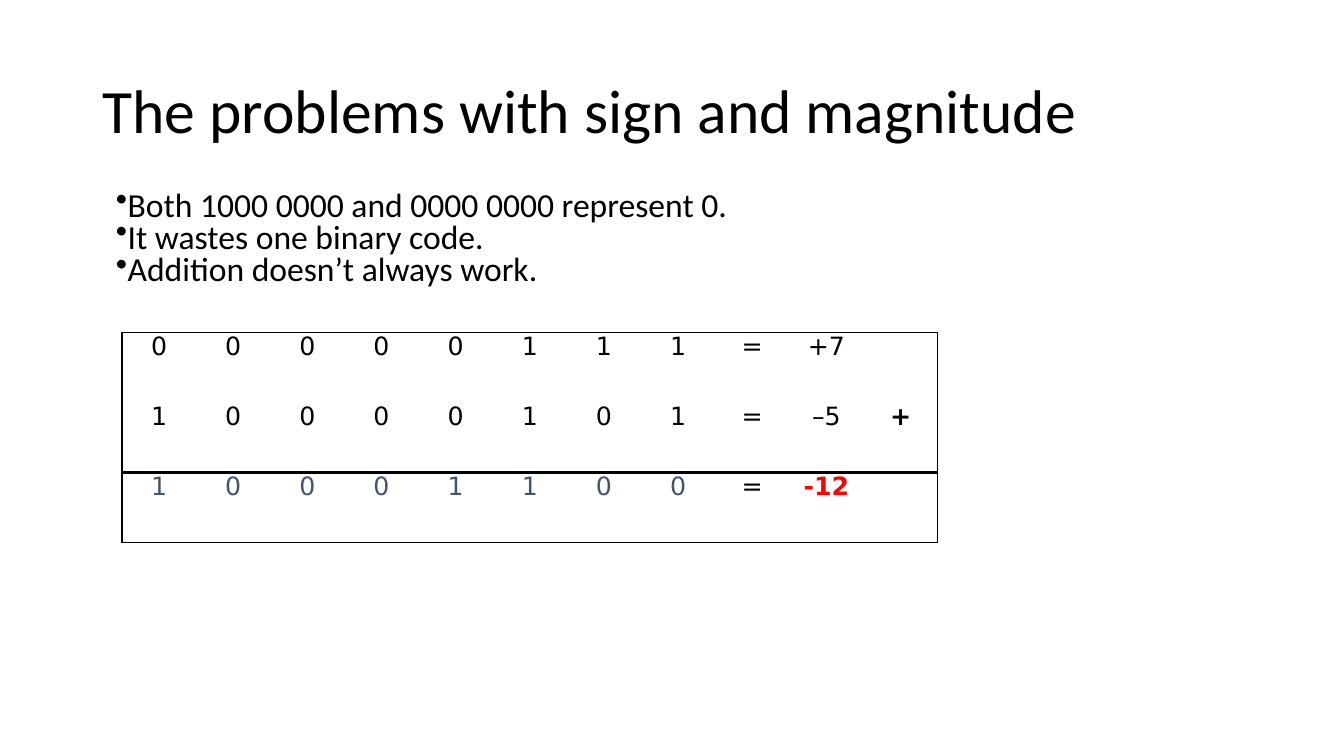
import lxml.etree
import pptx
import pptx.dml.color
import pptx.enum.text
import pptx.oxml.ns
import pptx.util

Inches = pptx.util.Inches
qn = pptx.oxml.ns.qn

COLORS = {"text": "000000", "sum": "44546A", "wrong": "FF0000"}
NO_STYLE_NO_GRID = "{2D5ABB26-0587-4C30-8999-92F81FD0307C}"
THIN, THICK = 1, 2.25

BULLETS = [
    "Both 1000 0000 and 0000 0000 represent 0.",
    "It wastes one binary code.",
    "Addition doesn’t always work.",
]
# bits, value, operator
ADDITION = [
    ("00000111", "+7", ""),
    ("10000101", "–5", "+"),
    ("10001100", "-12", ""),
]


class SlideBuilder:
    def __init__(self, prs):
        self.s = prs.slides.add_slide(prs.slide_layouts[6])
        self.font = "Calibri"
        self.table_font = "DejaVu Sans"

    def run(self, p, text, size, font, color="text", bold=False):
        r = p.add_run()
        r.text = text
        r.font.size = pptx.util.Pt(size)
        r.font.name = font
        r.font.bold = bold
        r.font.color.rgb = pptx.dml.color.RGBColor.from_string(COLORS[color])

    def text(self, box, lines, size, spacing, anchor, bullet=None):
        tf = self.s.shapes.add_textbox(*map(Inches, box)).text_frame
        tf.word_wrap = True
        tf.vertical_anchor = anchor
        for i, line in enumerate(lines):
            p = tf.add_paragraph() if i else tf.paragraphs[0]
            p.line_spacing = spacing
            if bullet:
                pPr = p._p.get_or_add_pPr()
                lxml.etree.SubElement(pPr, qn("a:buChar"), char=bullet)
            self.run(p, line, size, self.font)

    def borders(self, cell, widths):
        """Draw the sides named in widths (L, R, T, B), in points."""
        tcPr = cell._tc.get_or_add_tcPr()
        for side in "LRTB":
            if side in widths:
                width = str(pptx.util.Pt(widths[side]))
                ln = lxml.etree.SubElement(tcPr, qn("a:ln" + side), w=width)
                fill = lxml.etree.SubElement(ln, qn("a:solidFill"))
                lxml.etree.SubElement(fill, qn("a:srgbClr"), val=COLORS["text"])

    def addition_table(self, box, rows):
        n_rows, n_cols = len(rows), len(rows[0][0]) + 3
        frame = self.s.shapes.add_table(n_rows, n_cols, *map(Inches, box))
        table = frame.table
        table.first_row = table.horz_banding = False
        table._tbl.tblPr.find(qn("a:tableStyleId")).text = NO_STYLE_NO_GRID
        last = n_rows - 1
        for i, (bits, value, operator) in enumerate(rows):
            for j, text in enumerate([*bits, "=", value, operator]):
                cell = table.cell(i, j)
                widths = {}
                if j == 0:
                    widths["L"] = THIN
                if j == n_cols - 1:
                    widths["R"] = THIN
                if i == 0:
                    widths["T"] = THIN
                if i == last:
                    widths.update(T=THICK, B=THIN)
                if i == last - 1:
                    widths["B"] = THICK
                self.borders(cell, widths)
                cell.fill.background()
                if not text:
                    continue
                cell.margin_left = cell.margin_right = 0
                cell.margin_top = cell.margin_bottom = 0
                p = cell.text_frame.paragraphs[0]
                p.alignment = pptx.enum.text.PP_ALIGN.CENTER
                is_wrong = i == last and text == value
                is_sum_bit = i == last and j < len(bits)
                color = "wrong" if is_wrong else "sum" if is_sum_bit else "text"
                bold = is_wrong or text == operator
                self.run(p, text, 18, self.table_font, color, bold)


def main():
    prs = pptx.Presentation()
    prs.slide_width, prs.slide_height = Inches(13.33), Inches(7.5)
    slide = SlideBuilder(prs)
    anchors = pptx.enum.text.MSO_ANCHOR
    slide.text((0.92, 0.4, 11.5, 1.45), ["The problems with sign and magnitude"],
               44, 0.9, anchors.MIDDLE)
    slide.text((1.05, 1.85, 6.67, 1.08), BULLETS, 24, 0.8, anchors.TOP, "•")
    slide.addition_table((1.21, 3.3, 8.09, 2.08), ADDITION)
    prs.save("out.pptx")


if __name__ == "__main__":
    main()
